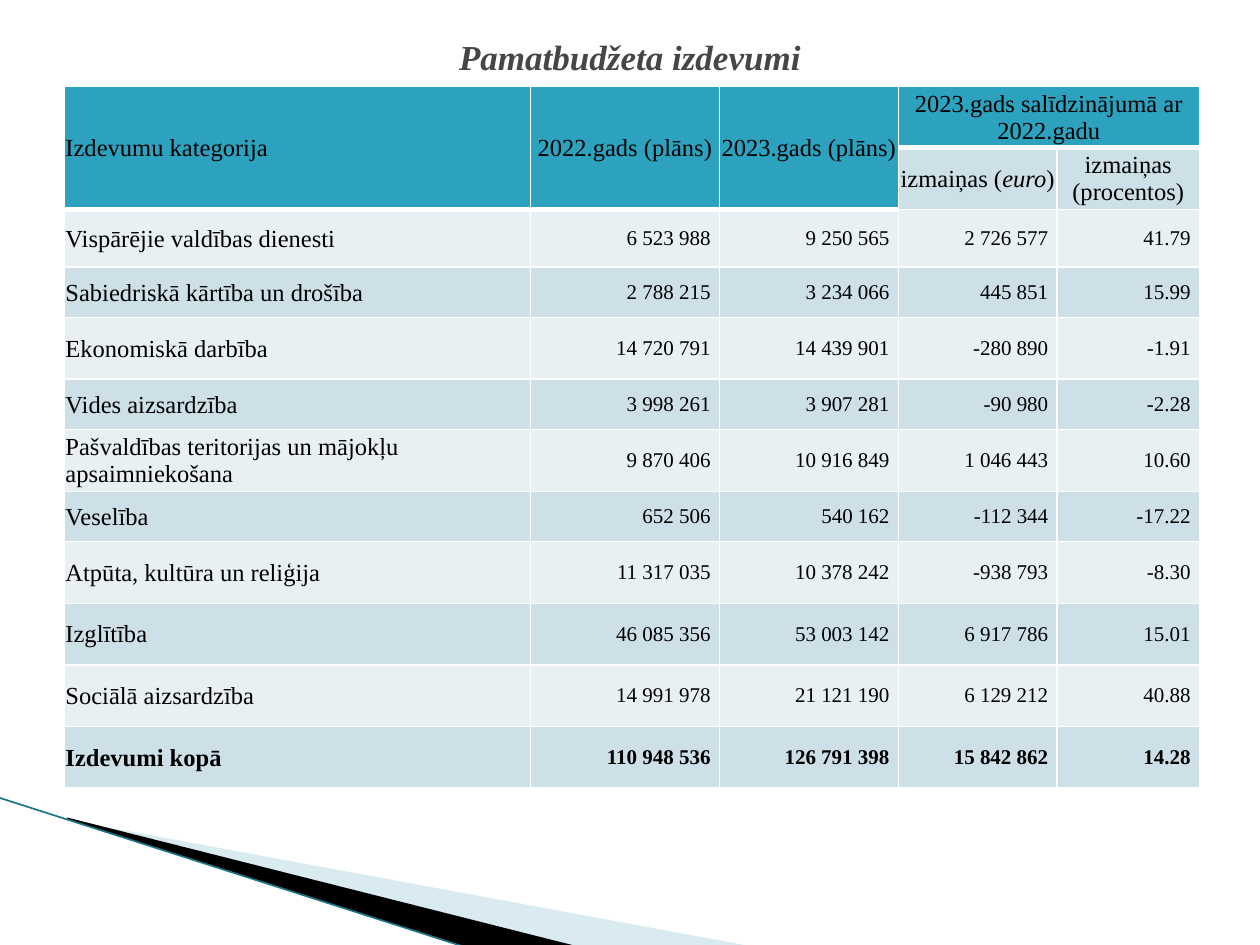
"""Build a slide with the table of basic budget expenditure."""
from dataclasses import dataclass
from typing import Optional

import lxml.etree
import pptx
import pptx.dml.color
import pptx.enum.shapes
import pptx.enum.text
import pptx.oxml.ns
import pptx.util

ALIGN = pptx.enum.text.PP_ALIGN
MIDDLE = pptx.enum.text.MSO_ANCHOR.MIDDLE
FONT = "Times New Roman"
HEAD, PALE, LIGHT = "2DA2BF", "CDE0E8", "E8F0F4"
COLS = (37, 15, 14.2, 12.6, 11.3)
TALL, MID, LOW = 6.53, 6.13, 5.33
HEADINGS = ("Izdevumu kategorija", "2022.gads (plāns)", "2023.gads (plāns)")


@dataclass
class Wedge:
    points: tuple
    color: str
    alpha: Optional[int] = None


@dataclass
class Expense:
    name: str
    values: tuple
    height: float = TALL
    bold: bool = False


WEDGES = (
    Wedge(((5.5, 86.8), (59.5, 100.1), (45.6, 100.1), (5.5, 86.7)), "A0CBDC", 40),
    Wedge(((5.3, 86.5), (45.7, 100.1), (37.2, 100.3), (5.4, 86.7)), "000000"),
)
EXPENSES = (
    Expense("Vispārējie valdības dienesti", ("6 523 988", "9 250 565", "2 726 577", "41.79"), MID),
    Expense("Sabiedriskā kārtība un drošība", ("2 788 215", "3 234 066", "445 851", "15.99"), LOW),
    Expense("Ekonomiskā darbība", ("14 720 791", "14 439 901", "-280 890", "-1.91")),
    Expense("Vides aizsardzība", ("3 998 261", "3 907 281", "-90 980", "-2.28"), LOW),
    Expense("Pašvaldības teritorijas un mājokļu apsaimniekošana",
            ("9 870 406", "10 916 849", "1 046 443", "10.60")),
    Expense("Veselība", ("652 506", "540 162", "-112 344", "-17.22"), LOW),
    Expense("Atpūta, kultūra un reliģija", ("11 317 035", "10 378 242", "-938 793", "-8.30")),
    Expense("Izglītība", ("46 085 356", "53 003 142", "6 917 786", "15.01")),
    Expense("Sociālā aizsardzība", ("14 991 978", "21 121 190", "6 129 212", "40.88")),
    Expense("Izdevumi kopā", ("110 948 536", "126 791 398", "15 842 862", "14.28"), bold=True),
)


def x(share: float) -> int:
    """Turn a percentage of the slide width into a length."""
    return pptx.util.Inches(10 * share / 100)


def y(share: float) -> int:
    """Turn a percentage of the slide height into a length."""
    return pptx.util.Inches(7.5 * share / 100)


def paint(target, color: str) -> None:
    """Give a fill format a solid colour."""
    target.solid()
    target.fore_color.rgb = pptx.dml.color.RGBColor.from_string(color)


def add_child(parent, tag: str, **attrs):
    """Append a drawing element to a parent element."""
    return lxml.etree.SubElement(parent, pptx.oxml.ns.qn(tag), attrs)


def style(p, size: float, color: str = "000000", bold: bool = False) -> None:
    """Set the font of a paragraph."""
    p.font.name, p.font.size, p.font.bold = FONT, pptx.util.Pt(size), bold
    paint(p.font.fill, color)


def draw_wedge(s, wedge: Wedge) -> None:
    """Draw one filled corner wedge."""
    points = [(x(px), y(py)) for px, py in wedge.points]
    builder = s.shapes.build_freeform(*points[0])
    builder.add_line_segments(points[1:], close=True)
    sp = builder.convert_to_shape()
    sp.shadow.inherit = False
    sp.line.fill.background()
    paint(sp.fill, wedge.color)
    if wedge.alpha is not None:
        color = sp._element.spPr.find(".//" + pptx.oxml.ns.qn("a:srgbClr"))
        add_child(color, "a:alpha", val=str(wedge.alpha * 1000))


def draw_edge(s) -> None:
    """Draw the thin line along the wedges."""
    line = s.shapes.add_connector(
        pptx.enum.shapes.MSO_CONNECTOR.STRAIGHT, x(-0.1), y(84.4), x(37.1), y(100.3))
    line.line.width = pptx.util.Pt(0.95)
    paint(line.line.fill, "1B7588")
    add_child(line._element.spPr, "a:effectLst")


def draw_title(s) -> None:
    """Write the slide title."""
    tf = s.shapes.add_textbox(x(5), y(4), x(90), y(4)).text_frame
    tf.word_wrap, tf.vertical_anchor = True, MIDDLE
    p = tf.paragraphs[0]
    p.text, p.alignment = "Pamatbudžeta izdevumi", ALIGN.CENTER
    style(p, 20, "464646", True)
    p.font.italic = True


def dress(cell, fill: str, bottom: float = 1) -> None:
    """Give a cell white borders and a fill."""
    tc_pr = cell._tc.get_or_add_tcPr()
    for tag, width in (("a:lnL", 1), ("a:lnR", 1), ("a:lnT", 1), ("a:lnB", bottom)):
        ln = add_child(tc_pr, tag, w=str(pptx.util.Pt(width)))
        add_child(add_child(ln, "a:solidFill"), "a:srgbClr", val="FFFFFF")
    paint(cell.fill, fill)


def write(cell, runs: tuple, align, size: float = 14, bold: bool = False) -> None:
    """Write runs into a cell, every second one in italics."""
    number = align == ALIGN.RIGHT
    cell.vertical_anchor = MIDDLE
    cell.margin_left = cell.margin_right = pptx.util.Inches(0.07 if number else 0.01)
    cell.margin_top = pptx.util.Inches(0 if number else 0.01)
    cell.margin_bottom = 0
    p = cell.text_frame.paragraphs[0]
    p.alignment = align
    for i, text in enumerate(runs):
        r = p.add_run()
        r.text = text
        if i % 2:
            r.font.italic = True
    style(p, size, bold=bold)


def draw_table(s) -> None:
    """Draw the expenditure table with its two heading rows."""
    heights = [TALL, TALL] + [e.height for e in EXPENSES]
    table = s.shapes.add_table(
        len(heights), len(COLS), x(5.1), y(9.1), x(sum(COLS)), y(sum(heights))).table
    table.first_row = table.horz_banding = False
    for column, share in zip(table.columns, COLS):
        column.width = x(share)
    for row, share in zip(table.rows, heights):
        row.height = y(share)
    for i in range(len(heights)):
        for j in range(len(COLS)):
            head = i == 0 or (i == 1 and j < len(HEADINGS))
            fill = HEAD if head else PALE if i % 2 else LIGHT
            dress(table.cell(i, j), fill, 3 if head else 1)
    for j, text in enumerate(HEADINGS):
        table.cell(0, j).merge(table.cell(1, j))
        write(table.cell(0, j), (text,), ALIGN.CENTER if j else ALIGN.LEFT)
    table.cell(0, 3).merge(table.cell(0, 4))
    write(table.cell(0, 3), ("2023.gads salīdzinājumā ar 2022.gadu",), ALIGN.CENTER)
    write(table.cell(1, 3), ("izmaiņas (", "euro", ")"), ALIGN.CENTER)
    write(table.cell(1, 4), ("izmaiņas (procentos)",), ALIGN.CENTER)
    for i, e in enumerate(EXPENSES, 2):
        write(table.cell(i, 0), (e.name,), ALIGN.LEFT, bold=e.bold)
        for j, value in enumerate(e.values, 1):
            write(table.cell(i, j), (value,), ALIGN.RIGHT, 12, e.bold)


def main() -> None:
    """Build and save the presentation."""
    prs = pptx.Presentation()
    prs.slide_width, prs.slide_height = x(100), y(100)
    s = prs.slides.add_slide(prs.slide_layouts[6])
    for wedge in WEDGES:
        draw_wedge(s, wedge)
    draw_edge(s)
    draw_table(s)
    draw_title(s)
    prs.save("out.pptx")


if __name__ == "__main__":
    main()
